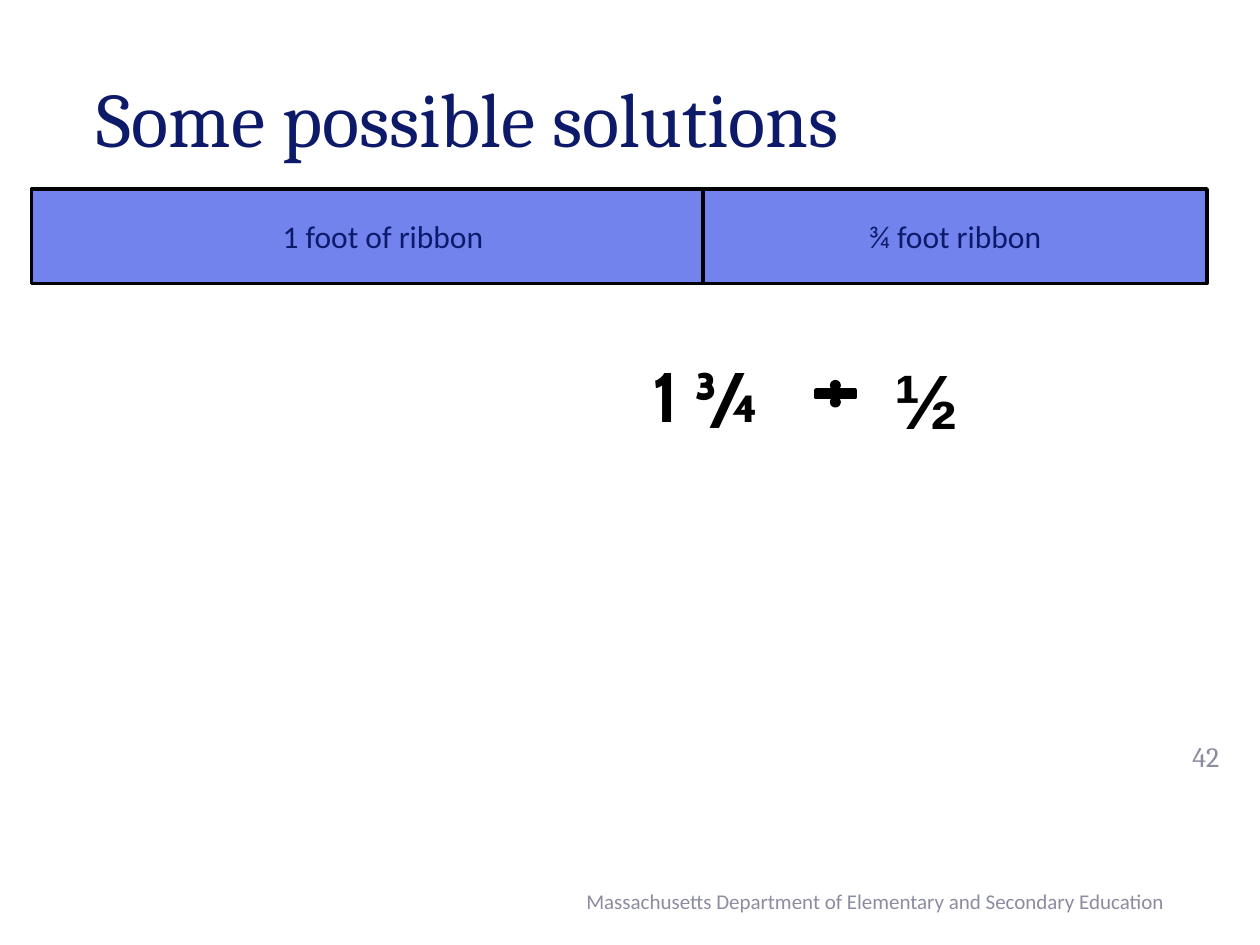
from pptx import Presentation
from pptx.dml.color import RGBColor
from pptx.enum.shapes import MSO_SHAPE as Shape
from pptx.enum.text import MSO_ANCHOR as Anchor, PP_ALIGN as Align
from pptx.util import Inches, Pt

NAVY = RGBColor(0x0D, 0x19, 0x69)
RIBBON_BLUE = RGBColor(0x73, 0x83, 0xEE)
GREY = RGBColor(0x8C, 0x8C, 0xA1)
BLACK = RGBColor(0, 0, 0)
WHITE = RGBColor(0xFF, 0xFF, 0xFF)


def write(shape, text, font, size, color, align=Align.LEFT, anchor=Anchor.MIDDLE, bold=False):
    """Put one styled paragraph into a shape."""
    frame = shape.text_frame
    frame.word_wrap = True
    frame.vertical_anchor = anchor
    para = frame.paragraphs[0]
    para.text = text
    para.alignment = align
    para.font.name = font
    para.font.size = Pt(size)
    para.font.bold = bold
    para.font.color.rgb = color


def add_text(page, box, text, font, size, color, **style):
    label = page.shapes.add_textbox(*map(Inches, box))
    write(label, text, font, size, color, **style)


def add_solid(page, kind, box, fill):
    """Add a filled shape with a black outline."""
    shape = page.shapes.add_shape(kind, *map(Inches, box))
    shape.shadow.inherit = False
    shape.fill.solid()
    shape.fill.fore_color.rgb = fill
    shape.line.color.rgb = BLACK
    shape.line.width = Pt(2)
    return shape


def add_ribbon(page, box):
    """Two lengths of ribbon; the second overlaps the end of the first."""
    left, top, width, height = box
    short = 4
    overlap = 0.25
    pieces = [
        ("1 foot of ribbon", left, width - short + overlap),
        ("¾ foot ribbon", left + width - short, short),
    ]
    for text, start, length in pieces:
        piece = add_solid(page, Shape.RECTANGLE, (start, top, length, height), RIBBON_BLUE)
        write(piece, text, "Calibri", 18, NAVY, align=Align.CENTER)


def add_division(page, box):
    """The division 1 ¾ ÷ ½."""
    left, top, _, height = box
    style = {"anchor": Anchor.TOP, "bold": True}
    add_text(page, (left, top, 1.25, height), "1 ¾", "Cabin", 40, BLACK, **style)
    add_solid(page, Shape.MATH_DIVIDE, (left + 1.34, top + 0.25, 0.42, 0.25), BLACK)
    add_text(page, (left + 1.92, top, 0.75, height), "½", "Arial", 44, BLACK, **style)


def add_footer(page, box):
    add_text(page, box, "Massachusetts Department of Elementary and Secondary Education",
             "Calibri", 12, GREY, align=Align.RIGHT)


def main():
    deck = Presentation()
    deck.slide_width, deck.slide_height = Inches(10), Inches(7.5)
    page = deck.slides.add_slide(deck.slide_layouts[6])
    page.background.fill.solid()
    page.background.fill.fore_color.rgb = WHITE

    # Title
    add_text(page, (0.67, 0.3, 8.67, 1.25), "Some possible solutions", "Cambria", 44, NAVY)
    # Ribbon and the division it stands for
    add_ribbon(page, (0.25, 1.5, 9.33, 0.75))
    add_division(page, (5.08, 2.75, 2.67, 0.83))
    # Footer and page number
    add_footer(page, (3.42, 6.95, 5.92, 0.4))
    add_text(page, (9.28, 5.75, 0.58, 0.5), "42", "Cambria", 16, GREY, align=Align.CENTER)

    deck.save("out.pptx")


if __name__ == "__main__":
    main()
